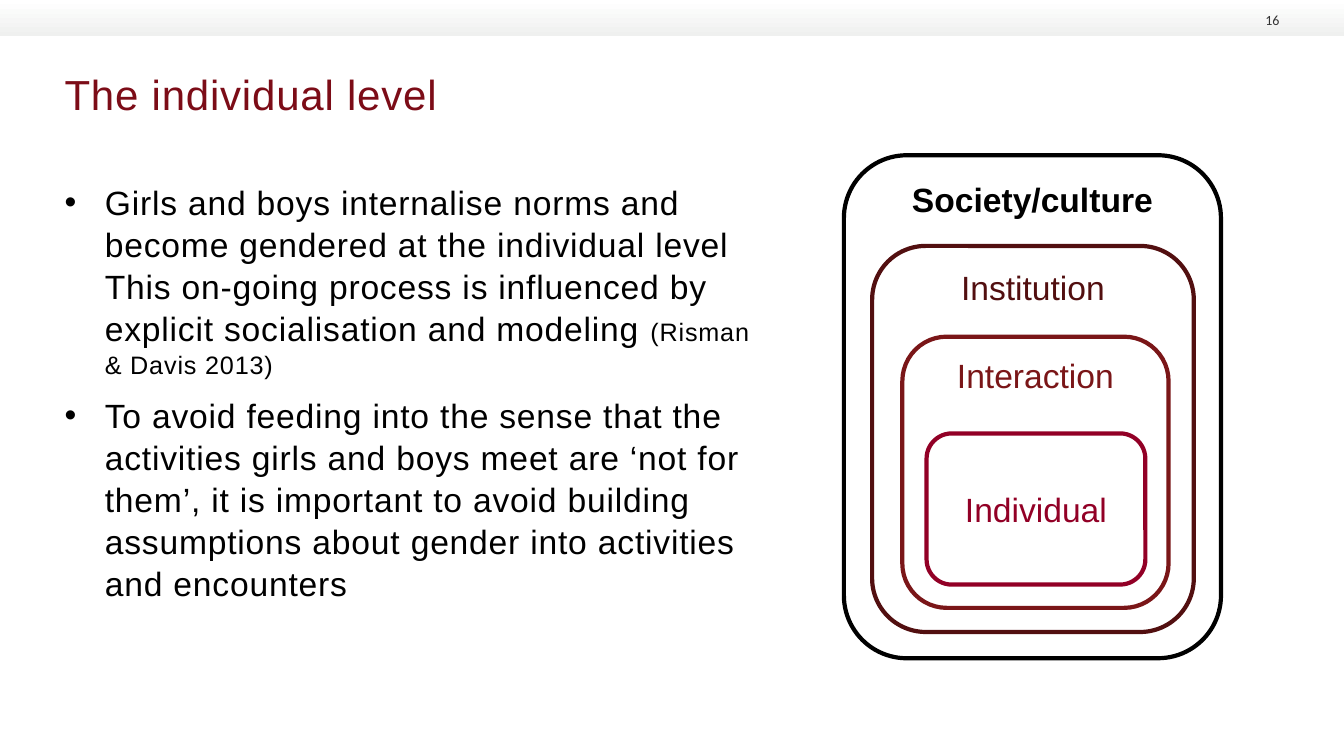
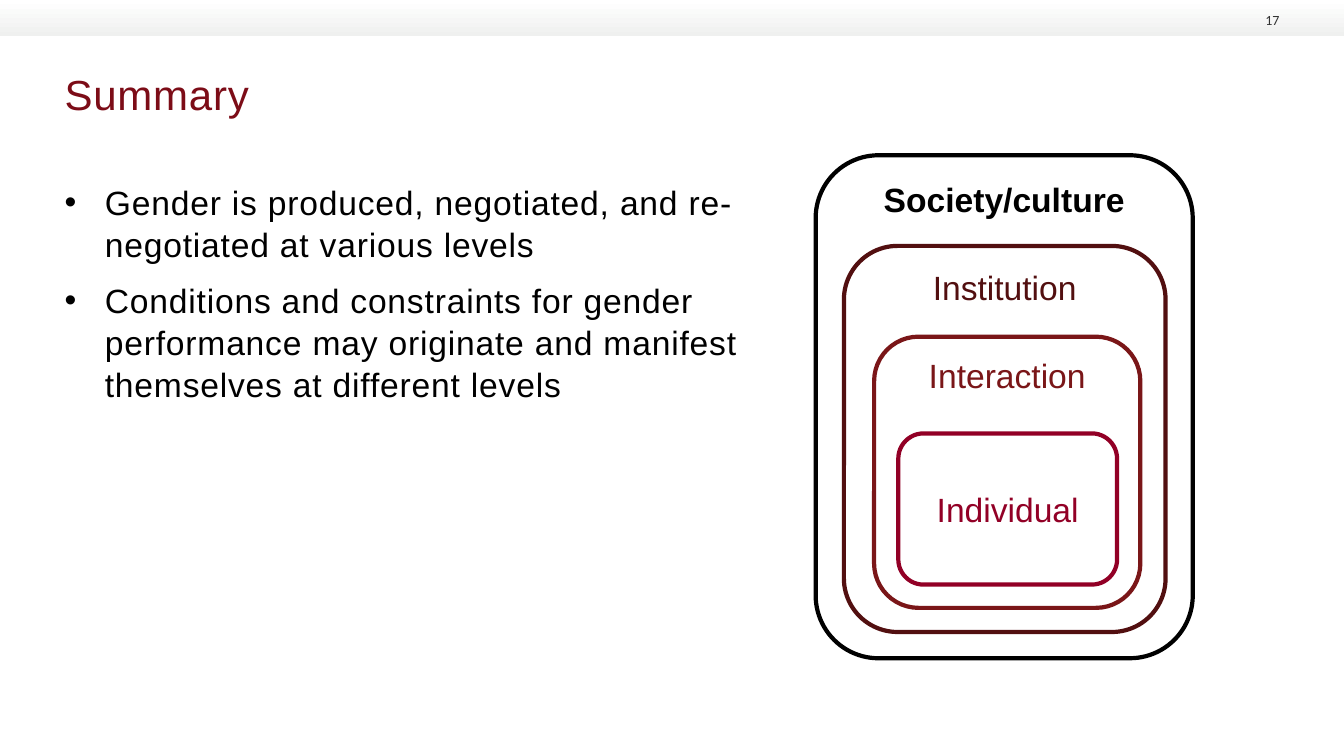
from lxml import etree
from pptx import Presentation
from pptx.dml.color import RGBColor
from pptx.enum.shapes import MSO_SHAPE
from pptx.enum.text import MSO_ANCHOR, PP_ALIGN
from pptx.oxml.ns import qn
from pptx.util import Inches, Pt

RECT, ROUNDED = MSO_SHAPE.RECTANGLE, MSO_SHAPE.ROUNDED_RECTANGLE
TOP, MIDDLE, BOTTOM = MSO_ANCHOR.TOP, MSO_ANCHOR.MIDDLE, MSO_ANCHOR.BOTTOM
CENTER, RIGHT = PP_ALIGN.CENTER, PP_ALIGN.RIGHT

COLORS = {
    "white": "FFFFFF", "black": "000000", "band_end": "EFF0EF",
    "title": "7C0C17", "number": "333333",
    "institution": "520F10", "interaction": "7A1618", "individual": "920026",
}
TRACKING = 0.6  # points between letters in title and body
MARGIN = 0.64
BULLET_INDENT = 0.4

# Content: each bullet is a list of (text, size) runs
SLIDES = [
    {
        "number": "16", "title": "The individual level",
        "body_width": 6.9, "levels_left": 8.37,
        "bullets": [
            [("Girls and boys internalise norms and become gendered at the "
              "individual level This on-going process is influenced by "
              "explicit socialisation and modeling ", 24),
             ("(Risman & Davis 2013)", 18)],
            [("To avoid feeding into the sense that the activities girls and "
              "boys meet are ‘not for them’, it is important to avoid "
              "building assumptions about gender into activities and "
              "encounters", 24)],
        ],
    },
    {
        "number": "17", "title": "Summary",
        "body_width": 7.36, "levels_left": 8.09,
        "bullets": [
            [("Gender is produced, negotiated, and re-negotiated at various "
              "levels", 24)],
            [("Conditions and constraints for gender performance may "
              "originate and manifest themselves at different levels", 24)],
        ],
    },
]

# Nested levels: label, colour, offset from the outer box, top, width, height
LEVELS = [
    ("Society/culture", "black", 0, 1.54, 3.74, 4.99),
    ("Institution", "institution", 0.28, 2.44, 3.19, 3.83),
    ("Interaction", "interaction", 0.58, 3.34, 2.64, 2.69),
    ("Individual", "individual", 0.82, 4.3, 2.17, 1.5),
]


def rgb(name):
    return RGBColor.from_string(COLORS[name])


def add_span(para, text, size, color, font="Arial", bold=False, tracking=0):
    span = para.add_run()
    span.text = text
    span.font.name = font
    span.font.size = Pt(size)
    span.font.bold = bold
    span.font.color.rgb = rgb(color)
    if tracking:
        span.font._element.set("spc", str(round(tracking * 100)))


def add_box(page, left, top, width, height, anchor=TOP):
    box = page.shapes.add_textbox(
        Inches(left), Inches(top), Inches(width), Inches(height))
    frame = box.text_frame
    frame.word_wrap = True
    frame.vertical_anchor = anchor
    frame.margin_left = frame.margin_right = 0
    frame.margin_top = frame.margin_bottom = 0
    return frame


def add_shape(page, kind, left, top, width, height):
    shape = page.shapes.add_shape(
        kind, Inches(left), Inches(top), Inches(width), Inches(height))
    shape.shadow.inherit = False
    return shape


def add_frame(page, title, number):
    """Top band, slide number and title shared by all slides."""
    band = add_shape(page, RECT, 0, 0, 13.33, 0.36)
    band.line.fill.background()
    band.fill.gradient()
    band.fill.gradient_angle = 270
    for stop, color in zip(band.fill.gradient_stops, ("white", "band_end")):
        stop.color.rgb = rgb(color)

    para = add_box(page, MARGIN, 0.68, 12.04, 0.95).paragraphs[0]
    add_span(para, title, 30, "title", tracking=TRACKING)

    para = add_box(page, 12.27, 0.09, 0.42, 0.19, BOTTOM).paragraphs[0]
    para.alignment = RIGHT
    add_span(para, number, 10, "number", font="Calibri")


def add_bullets(page, bullets, width):
    frame = add_box(page, MARGIN, 1.79, width, 4.95)
    for index, spans in enumerate(bullets):
        para = frame.add_paragraph() if index else frame.paragraphs[0]
        para.line_spacing = 1.04
        if index:
            para.space_before = Pt(10)
        properties = para._p.get_or_add_pPr()
        properties.set("marL", str(Inches(BULLET_INDENT)))
        properties.set("indent", str(-Inches(BULLET_INDENT)))
        etree.SubElement(properties, qn("a:buFont")).set("typeface", "Arial")
        etree.SubElement(properties, qn("a:buChar")).set("char", "•")
        for text, size in spans:
            add_span(para, text, size, "black", tracking=TRACKING)


def add_levels(page, left):
    for index, (label, color, offset, top, width, height) in enumerate(LEVELS):
        level = add_shape(page, ROUNDED, left + offset, top, width, height)
        level.fill.solid()
        level.fill.fore_color.rgb = rgb("white")
        level.line.color.rgb = rgb(color)
        level.line.width = Pt(3)
        frame = level.text_frame
        frame.word_wrap = True
        innermost = index == len(LEVELS) - 1
        frame.vertical_anchor = MIDDLE if innermost else TOP
        para = frame.paragraphs[0]
        para.alignment = CENTER
        add_span(para, label, 24, color, bold=index == 0)


def main():
    deck = Presentation()
    deck.slide_width, deck.slide_height = Inches(13.33), Inches(7.5)
    for content in SLIDES:
        page = deck.slides.add_slide(deck.slide_layouts[6])
        add_frame(page, content["title"], content["number"])
        add_bullets(page, content["bullets"], content["body_width"])
        add_levels(page, content["levels_left"])
    deck.save("out.pptx")


if __name__ == "__main__":
    main()
